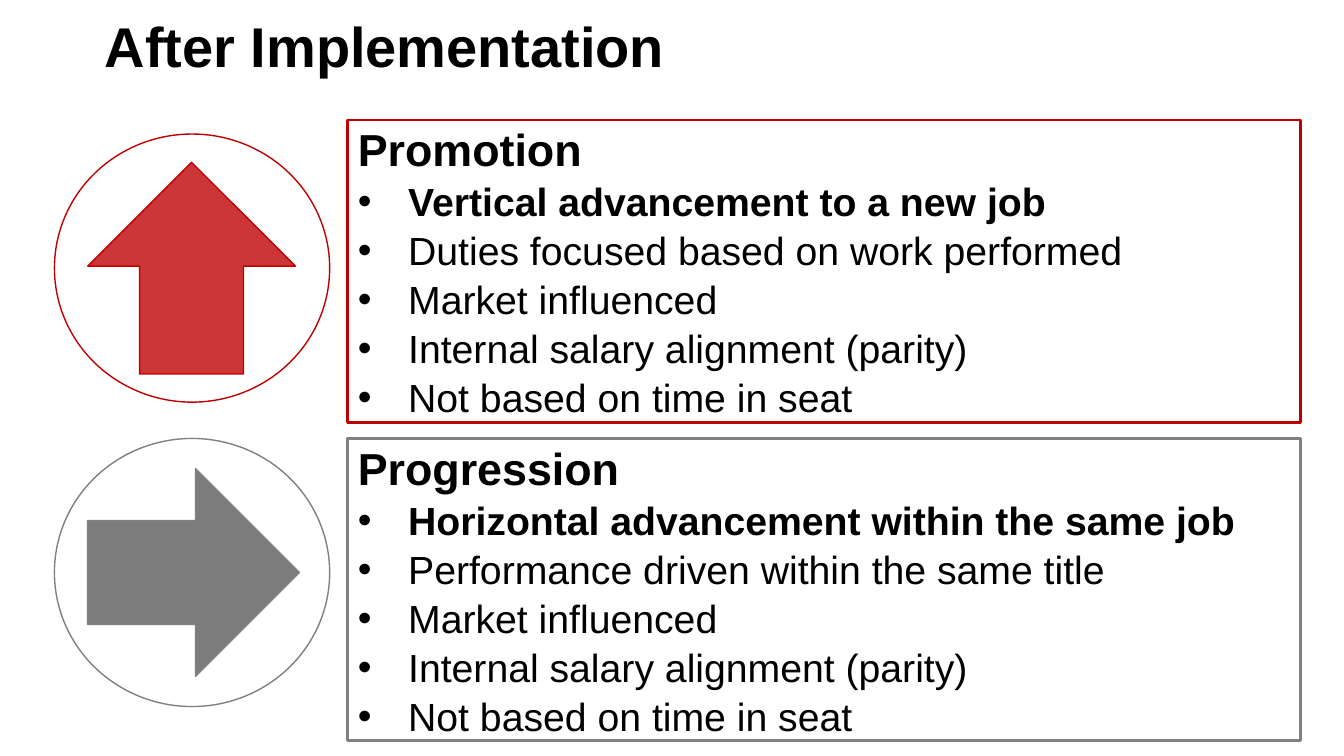
from lxml import etree
from pptx import Presentation
from pptx.dml.color import RGBColor
from pptx.enum.shapes import MSO_SHAPE as Shape
from pptx.enum.text import MSO_ANCHOR as Anchor, PP_ALIGN as Align
from pptx.oxml.ns import qn
from pptx.util import Inches, Pt

COLORS = {"text": "000000", "red": "C00000", "gray": "808080", "dark": "595959"}
TITLE = "After Implementation"
SHARED_POINTS = ["Market influenced", "Internal salary alignment (parity)", "Not based on time in seat"]
PANELS = [
    {
        "heading": "Promotion",
        "key_point": "Vertical advancement to a new job",
        "points": ["Duties focused based on work performed", *SHARED_POINTS],
        "line": "red", "fill": "red", "rotation": 270,
        "box_top": 1.19, "circle_top": 1.33, "arrow_left": 0.85,
    },
    {
        "heading": "Progression",
        "key_point": "Horizontal advancement within the same job",
        "points": ["Performance driven within the same title", *SHARED_POINTS],
        "line": "gray", "fill": "dark", "rotation": 0,
        "box_top": 4.35, "circle_top": 4.35, "arrow_left": 0.87,
    },
]
ARROW_INSET = 0.3
ARROW_OPACITY = 79
HEADING = {"size": Pt(32), "bold": True}
KEY_POINT = {"size": Pt(28), "bold": True}
POINT = {"size": Pt(28), "bold": False}


def color(name):
    return RGBColor.from_string(COLORS[name])


def add_outline(slide, kind, position, line, width):
    shape = slide.shapes.add_shape(kind, *map(Inches, position))
    shape.shadow.inherit = False
    shape.fill.background()
    shape.line.color.rgb = color(line)
    shape.line.width = Pt(width)
    return shape


def write(paragraph, text, style):
    paragraph.text = text
    paragraph.alignment = Align.LEFT
    for name, value in {"name": "Arial", **style}.items():
        setattr(paragraph.font, name, value)
    paragraph.font.color.rgb = color("text")


def add_bullet(paragraph):
    properties = paragraph._p.get_or_add_pPr()
    properties.set("marL", str(Inches(0.5)))
    properties.set("indent", str(-Inches(0.5)))
    etree.SubElement(properties, qn("a:buFont")).set("typeface", "Arial")
    etree.SubElement(properties, qn("a:buChar")).set("char", "•")
    paragraph.space_before = Pt(1.4)


def add_arrow(slide, panel):
    top = panel["circle_top"] + ARROW_INSET
    arrow = add_outline(slide, Shape.RIGHT_ARROW, (panel["arrow_left"], top, 2.1, 2.06), panel["line"], 1)
    arrow.rotation = panel["rotation"]
    arrow.fill.solid()
    arrow.fill.fore_color.rgb = color(panel["fill"])
    fill_color = arrow._element.spPr.find(qn("a:solidFill")).find(qn("a:srgbClr"))
    etree.SubElement(fill_color, qn("a:alpha")).set("val", str(ARROW_OPACITY * 1000))


def add_panel(slide, panel):
    add_outline(slide, Shape.OVAL, (0.54, panel["circle_top"], 2.73, 2.66), panel["line"], 1)
    add_arrow(slide, panel)
    box = add_outline(slide, Shape.RECTANGLE, (3.45, panel["box_top"], 9.45, 3), panel["line"], 2)
    frame = box.text_frame
    frame.word_wrap = True
    frame.vertical_anchor = Anchor.MIDDLE
    write(frame.paragraphs[0], panel["heading"], HEADING)
    bullets = [(panel["key_point"], KEY_POINT)] + [(point, POINT) for point in panel["points"]]
    for text, style in bullets:
        paragraph = frame.add_paragraph()
        add_bullet(paragraph)
        write(paragraph, text, style)


def main():
    presentation = Presentation()
    presentation.slide_width = Inches(13.33)
    presentation.slide_height = Inches(7.5)
    slide = presentation.slides.add_slide(presentation.slide_layouts[6])
    title = slide.shapes.add_textbox(*map(Inches, (0.94, 0.07, 12.39, 0.77)))
    title.text_frame.word_wrap = True
    write(title.text_frame.paragraphs[0], TITLE, {"size": Pt(40), "bold": True})
    for panel in PANELS:
        add_panel(slide, panel)
    presentation.save("out.pptx")


if __name__ == "__main__":
    main()
